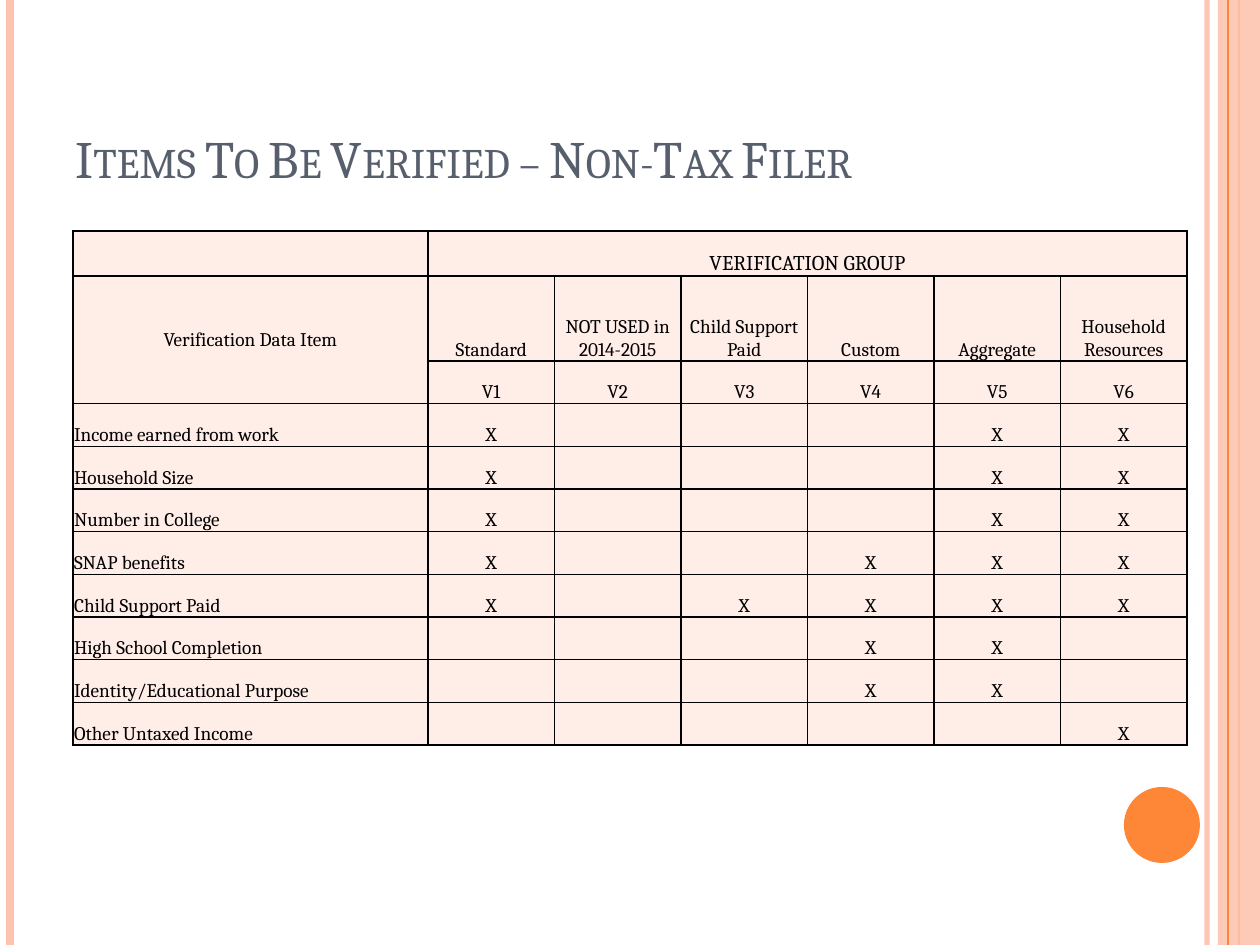
from dataclasses import dataclass

from lxml import etree
from pptx import Presentation
from pptx import util as u
from pptx.dml.color import RGBColor
from pptx.enum import shapes, text
from pptx.oxml import ns

SCALE = 914400 / 126


@dataclass(frozen=True)
class Theme:
    """Colours, font and type sizes of the slide."""
    font: str = "Cambria"
    heading: str = "575F6D"
    ink: str = "000000"
    cell: str = "FFEDE8"
    pale: str = "FEC3AE"
    accent: str = "FE8637"
    title_size: int = 30
    group_size: int = 12
    body_size: int = 11


THEME = Theme()
GROUPS = ["Standard", "NOT USED in 2014-2015", "Child Support Paid",
          "Custom", "Aggregate", "Household Resources"]
CHECKS = {
    "Income earned from work": (1, 5, 6),
    "Household Size": (1, 5, 6),
    "Number in College": (1, 5, 6),
    "SNAP benefits": (1, 4, 5, 6),
    "Child Support Paid": (1, 3, 4, 5, 6),
    "High School Completion": (4, 5),
    "Identity/Educational Purpose": (4, 5),
    "Other Untaxed Income": (6,),
}


def px(length):
    """Turn px into EMU."""
    return u.Emu(round(length * SCALE))


def rgb(colour):
    """Turn a hex string into a colour."""
    return RGBColor.from_string(colour)


def set_alpha(shape, percent):
    """Make the one colour of a shape partly transparent."""
    colour = shape._element.spPr.find(".//" + ns.qn("a:srgbClr"))
    etree.SubElement(colour, ns.qn("a:alpha"), val=str(percent * 1000))


def style_font(font, size, colour):
    """Apply the theme font at a size and colour."""
    font.name, font.size, font.bold = THEME.font, u.Pt(size), False
    font.color.rgb = rgb(colour)


def add_stripe(slide, x, box, colour, weight):
    """Draw a vertical line x px into the box."""
    left, top, _, height = box
    stripe = slide.shapes.add_connector(
        shapes.MSO_CONNECTOR.STRAIGHT, px(left + x), px(top), px(left + x), px(top + height))
    stripe.line.color.rgb = rgb(colour)
    stripe.line.width = u.Pt(weight)
    etree.SubElement(stripe._element.spPr, ns.qn("a:effectLst"))
    return stripe


def add_solid(slide, kind, box, colour):
    """Draw a filled shape without outline."""
    solid = slide.shapes.add_shape(kind, *map(px, box))
    solid.shadow.inherit = False
    solid.fill.solid()
    solid.fill.fore_color.rgb = rgb(colour)
    solid.line.fill.background()
    return solid


def add_margins(slide, box):
    """Draw the stripes, band and disc along the slide edges."""
    left, top, width, height = box
    right = left + width
    set_alpha(add_stripe(slide, 1207, box, THEME.pale, 3), 93)
    add_stripe(slide, 10, box, THEME.pale, 4.5)
    add_stripe(slide, 1239, box, THEME.accent, 1.5)
    band = add_solid(slide, shapes.MSO_SHAPE.RECTANGLE, (right - 42, top, 42, height), THEME.pale)
    set_alpha(band, 87)
    add_stripe(slide, 1228, box, THEME.accent, 0.75)
    add_solid(slide, shapes.MSO_SHAPE.OVAL, (right - 136, top + 787, 76, 76), THEME.accent)


def add_title(slide, box):
    """Set the heading in small capitals at the foot of its box."""
    frame = slide.shapes.add_textbox(*map(px, box)).text_frame
    frame.word_wrap = True
    frame.vertical_anchor = text.MSO_ANCHOR.BOTTOM
    heading = frame.paragraphs[0]
    run = heading.add_run()
    run.text = "Items To Be Verified – Non-Tax Filer"
    style_font(heading.font, THEME.title_size, THEME.heading)
    run._r.get_or_add_rPr().set("cap", "small")


def style_cell(cell, size, align, anchor):
    """Give a cell its borders, fill, insets and type."""
    properties = cell._tc.get_or_add_tcPr()
    for side in ("lnL", "lnR", "lnT", "lnB"):
        border = etree.SubElement(properties, ns.qn(f"a:{side}"), w=str(u.Pt(1)))
        fill = etree.SubElement(border, ns.qn("a:solidFill"))
        etree.SubElement(fill, ns.qn("a:srgbClr"), val=THEME.ink)
    cell.fill.solid()
    cell.fill.fore_color.rgb = rgb(THEME.cell)
    cell.margin_left = cell.margin_right = cell.margin_top = px(1)
    cell.margin_bottom = 0
    cell.vertical_anchor = anchor
    paragraph = cell.text_frame.paragraphs[0]
    paragraph.alignment = align
    style_font(paragraph.font, size, THEME.ink)


def add_verification_table(slide, box):
    """Build the grid of data items against verification groups."""
    codes = range(1, len(GROUPS) + 1)
    rows = [["", "VERIFICATION GROUP"] + [""] * (len(GROUPS) - 1),
            ["Verification Data Item"] + GROUPS,
            [""] + [f"V{code}" for code in codes]]
    rows += [[item] + ["X" if code in checked else "" for code in codes]
             for item, checked in CHECKS.items()]
    _, _, width, height = box
    item_width, group_height, name_height = 355, 45, 85
    table = slide.shapes.add_table(len(rows), len(rows[0]), *map(px, box)).table
    table.first_row = table.horz_banding = False
    for index, column in enumerate(table.columns):
        column.width = px((width - item_width) / len(GROUPS) if index else item_width)
    line_height = (height - group_height - name_height) / (len(rows) - 2)
    heights = [group_height, name_height] + [line_height] * (len(rows) - 2)
    for row, row_height in zip(table.rows, heights):
        row.height = px(row_height)
    for r, wording in enumerate(rows):
        for c, words in enumerate(wording):
            cell = table.cell(r, c)
            cell.text = words
            is_item = c == 0 and r > 2
            is_corner = c == 0 and r in (1, 2)
            style_cell(cell, THEME.body_size if r else THEME.group_size,
                       text.PP_ALIGN.LEFT if is_item else text.PP_ALIGN.CENTER,
                       text.MSO_ANCHOR.MIDDLE if is_corner else text.MSO_ANCHOR.BOTTOM)
    table.cell(0, 1).merge(table.cell(0, len(GROUPS)))
    table.cell(1, 0).merge(table.cell(2, 0))


def main():
    """Build and save the slide."""
    deck = Presentation()
    deck.slide_width, deck.slide_height = px(1260), px(945)
    slide = deck.slides.add_slide(deck.slide_layouts[6])
    add_margins(slide, (0, 0, 1260, 945))
    add_title(slide, (63, 38, 1029, 157))
    add_verification_table(slide, (73, 231, 1114, 514))
    deck.save("out.pptx")


if __name__ == "__main__":
    main()
